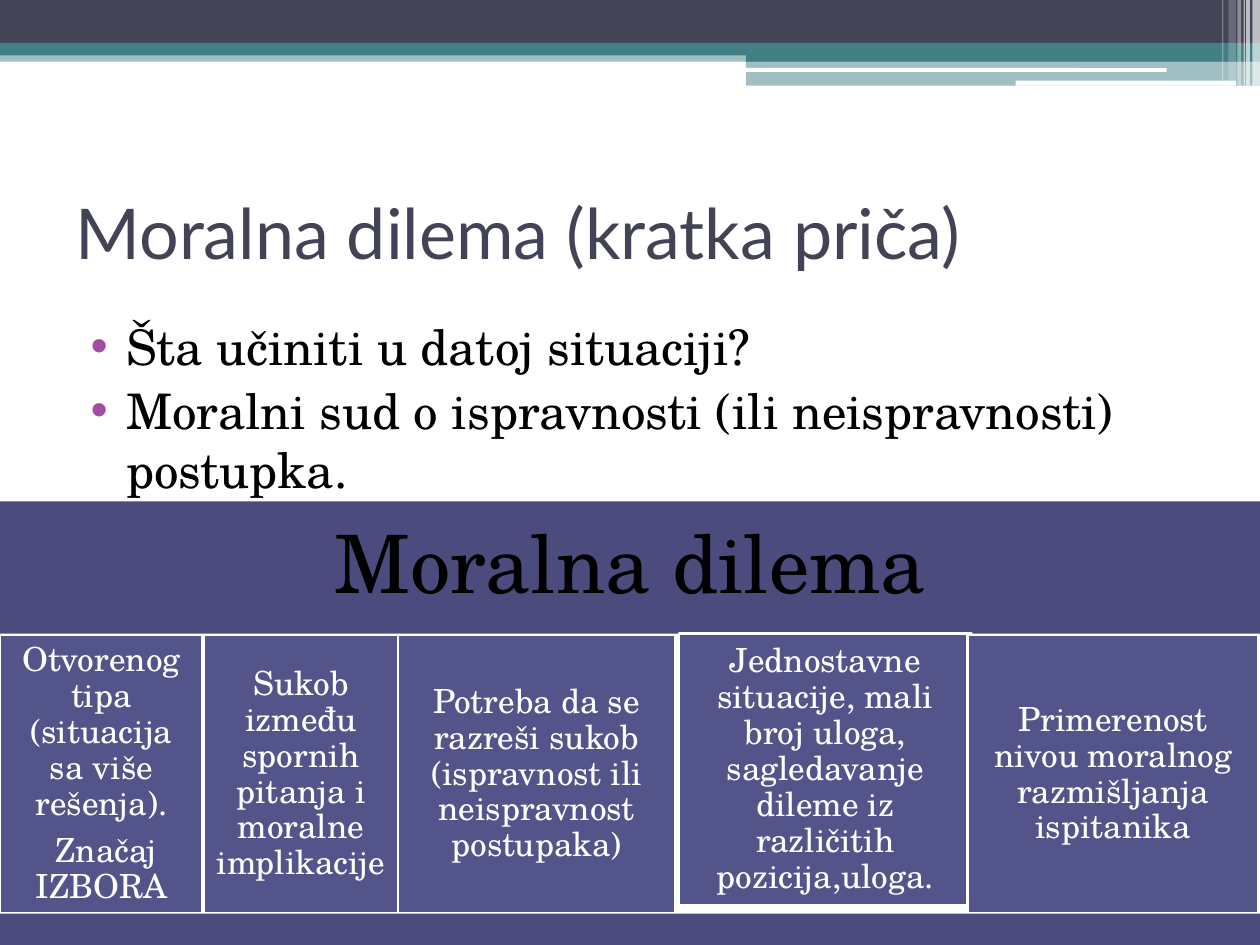
from lxml import etree
from pptx import Presentation
from pptx.dml.color import RGBColor
from pptx.enum.shapes import MSO_SHAPE
from pptx.enum.text import MSO_ANCHOR, MSO_AUTO_SIZE, PP_ALIGN
from pptx.oxml.ns import qn
from pptx.util import Emu, Pt

RECTANGLE, ROUNDED = MSO_SHAPE.RECTANGLE, MSO_SHAPE.ROUNDED_RECTANGLE
MIDDLE, TOP = MSO_ANCHOR.MIDDLE, MSO_ANCHOR.TOP
LEFT, CENTER = PP_ALIGN.LEFT, PP_ALIGN.CENTER
NO_AUTOFIT = MSO_AUTO_SIZE.NONE

EMU_PER_PX = 9144  # 100 px to the inch
WIDTH, HEIGHT = 1000, 750
HEADING_FONT, BODY_FONT = "Lato", "TeX Gyre Schola"
COLORS = {
    "white": "FFFFFF", "black": "000000", "slate": "424456", "teal": "438086",
    "bullet": "A04DA3", "band": "4B4C7D", "box": "53548A",
}

# left, top, width, height, colour, opacity in percent
HEADER_BARS = [
    (0, 40, WIDTH, 9, "teal", 50),
    (0, 0, WIDTH, 34, "slate", 100),
    (0, 34, WIDTH, 10, "teal", 100),
    (592, 39, 408, 10, "teal", 100),
    (592, 48, 408, 20, "teal", 50),
]
HEADER_LINES = [(591, 54, 335, 3), (806, 64, 175, 4)]
# left, width, height, opacity in percent
HEADER_STRIPES = [
    (994, 6, 68, 65), (989, 3, 68, 65), (987, 1, 68, 60),
    (982, 3, 68, 40), (975, 6, 64, 20), (970, 1, 64, 30),
]
BULLETS = [
    "Šta učiniti u datoj situaciji?",
    "Moralni sud o ispravnosti (ili neispravnosti) postupka.",
]
# left, top, width, height, paragraphs
FEATURES = [
    (0, 504, 161, 221, ["Otvorenog tipa (situacija sa više rešenja).", " Značaj IZBORA"]),
    (162, 504, 154, 221, ["Sukob između spornih pitanja i moralne implikacije"]),
    (316, 504, 220, 221,
     ["Potreba da se razreši sukob (ispravnost ili neispravnost postupaka)"]),
    (539, 503, 232, 216,
     ["Jednostavne situacije, mali broj uloga, sagledavanje dileme iz različitih "
      "pozicija,uloga."]),
    (768, 504, 231, 221, ["Primerenost nivou moralnog razmišljanja ispitanika"]),
]


def px(length):
    return Emu(length * EMU_PER_PX)


def rgb(name):
    return RGBColor.from_string(COLORS[name])


class SlideBuilder:
    def __init__(self, slide):
        self.slide = slide

    def bar(self, left, top, width, height, color, opacity=100, kind=RECTANGLE, line=None):
        shape = self.slide.shapes.add_shape(kind, px(left), px(top), px(width), px(height))
        shape.shadow.inherit = False
        shape.fill.solid()
        shape.fill.fore_color.rgb = rgb(color)
        if opacity < 100:
            color_element = shape.fill._xPr.find(qn("a:solidFill"))[0]
            etree.SubElement(color_element, qn("a:alpha"), val=str(opacity * 1000))
        if line:
            shape.line.color.rgb = rgb(line)
            shape.line.width = Pt(1.5)
        else:
            shape.line.fill.background()
        return shape

    def set_text(self, shape, texts, size, color, font=BODY_FONT, align=LEFT, anchor=MIDDLE):
        frame = shape.text_frame
        frame.word_wrap = True
        frame.auto_size = NO_AUTOFIT
        frame.vertical_anchor = anchor
        frame.text = "\n".join(texts)
        for paragraph in frame.paragraphs:
            paragraph.alignment = align
            paragraph.font.size = Pt(size)
            paragraph.font.name = font
            paragraph.font.color.rgb = rgb(color)
        return frame

    def box(self, left, top, width, height, texts, fill, size, color, inset, line=None):
        shape = self.bar(left, top, width, height, fill, line=line)
        frame = self.set_text(shape, texts, size, color, align=CENTER)
        frame.margin_left = frame.margin_right = px(inset)
        frame.margin_top = frame.margin_bottom = px(inset)
        for paragraph in frame.paragraphs:
            paragraph.line_spacing = 0.9
            paragraph.space_after = Pt(round(size * 0.35, 1))

    def place(self, placeholder, left, top, width, height):
        placeholder.left, placeholder.top = px(left), px(top)
        placeholder.width, placeholder.height = px(width), px(height)
        return placeholder

    def title(self, text, *bounds):
        shape = self.place(self.slide.shapes.title, *bounds)
        self.set_text(shape, [text], 40, "slate", font=HEADING_FONT)

    def bullets(self, texts, *bounds):
        shape = self.place(self.slide.placeholders[1], *bounds)
        frame = self.set_text(shape, texts, 28, "black", anchor=TOP)
        for paragraph in frame.paragraphs:
            paragraph.space_before = Pt(3)
            properties = paragraph._p.get_or_add_pPr()
            properties.set("marL", str(px(40)))
            properties.set("indent", str(px(-28)))
            bullet_color = etree.Element(qn("a:buClr"))
            etree.SubElement(bullet_color, qn("a:srgbClr"), val=COLORS["bullet"])
            bullet = etree.Element(qn("a:buChar"), char="•")
            font_defaults = properties.find(qn("a:defRPr"))
            font_defaults.addprevious(bullet_color)
            font_defaults.addprevious(bullet)


def main():
    presentation = Presentation()
    presentation.slide_width, presentation.slide_height = px(WIDTH), px(HEIGHT)
    slide = presentation.slides.add_slide(presentation.slide_layouts[1])
    builder = SlideBuilder(slide)

    for bar in HEADER_BARS:
        builder.bar(*bar)
    for bounds in HEADER_LINES:
        builder.bar(*bounds, "white", kind=ROUNDED)
    for left, width, height, opacity in HEADER_STRIPES:
        builder.bar(left, 0, width, height, "white", opacity)

    builder.title("Moralna dilema (kratka priča)", 50, 125, 900, 117)
    builder.bullets(BULLETS, 50, 246, 900, 473)

    builder.box(0, 398, WIDTH, 105, ["Moralna dilema"], "band", 46, "black", 19)
    for *bounds, texts in FEATURES:
        builder.box(*bounds, texts, "box", 19, "white", 8, line="white")
    builder.bar(0, 725, WIDTH, 25, "band")

    presentation.save("out.pptx")


if __name__ == "__main__":
    main()
